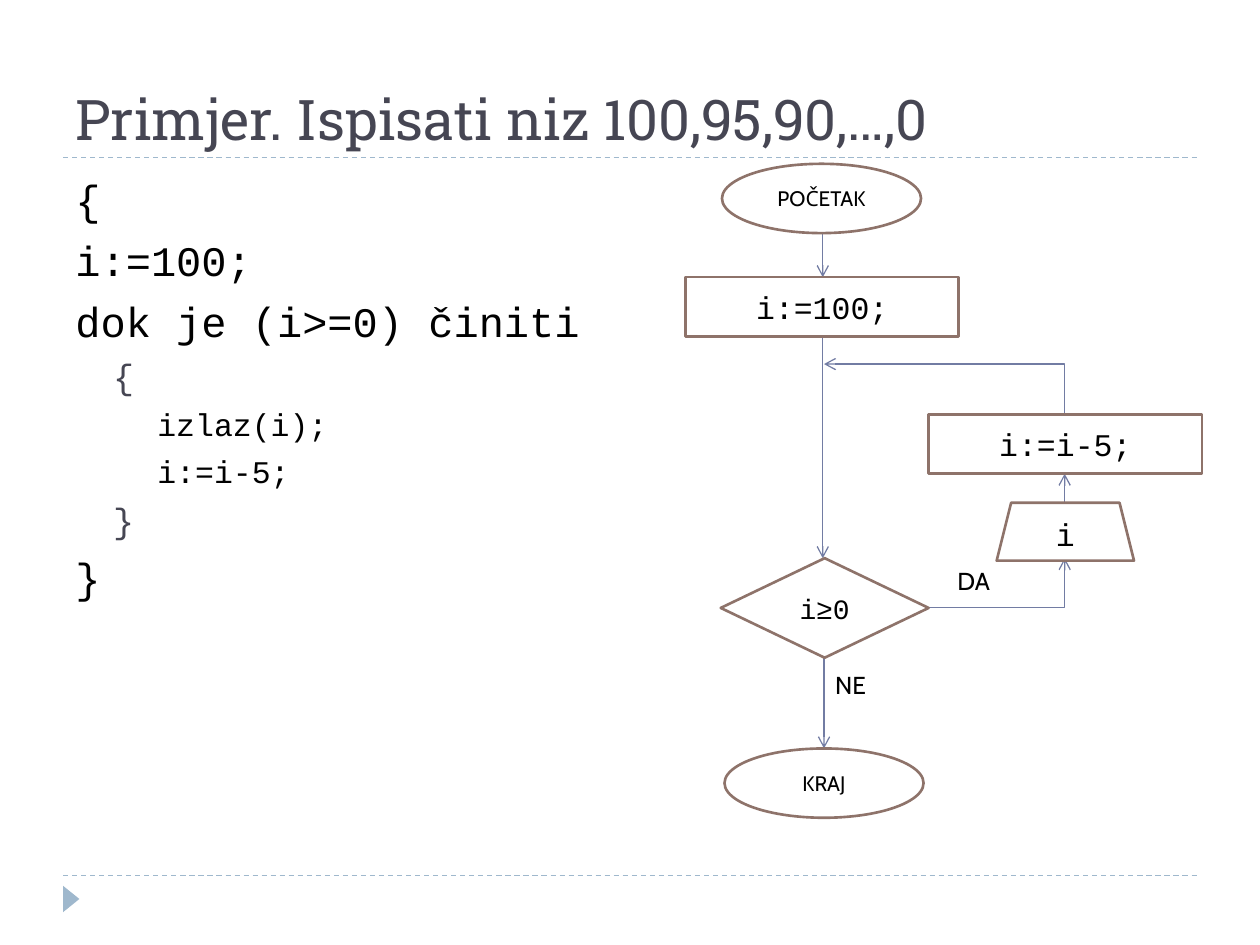
from lxml import etree
from pptx import Presentation
from pptx.dml.color import RGBColor
from pptx.enum.dml import MSO_LINE
from pptx.enum.shapes import MSO_CONNECTOR, MSO_SHAPE
from pptx.enum.text import MSO_ANCHOR, PP_ALIGN
from pptx.oxml.ns import qn
from pptx.util import Inches, Pt

BLACK = RGBColor(0x00, 0x00, 0x00)
WHITE = RGBColor(0xFF, 0xFF, 0xFF)
SLATE = RGBColor(0x46, 0x46, 0x53)
PALE_BLUE = RGBColor(0x9F, 0xB8, 0xCD)
ARROW_BLUE = RGBColor(0x72, 0x7C, 0xA3)
BROWN = RGBColor(0x8E, 0x73, 0x6A)
CODE, SANS, SERIF = "Courier New", "Cabin", "Roboto Slab"
STRAIGHT, ELBOW = MSO_CONNECTOR.STRAIGHT, MSO_CONNECTOR.ELBOW
ELLIPSE, RECT = MSO_SHAPE.OVAL, MSO_SHAPE.RECTANGLE
DIAMOND, TRAPEZOID = MSO_SHAPE.DIAMOND, MSO_SHAPE.TRAPEZOID
TRIANGLE = MSO_SHAPE.ISOSCELES_TRIANGLE
DASH = MSO_LINE.DASH
CENTER = PP_ALIGN.CENTER
MIDDLE, BOTTOM = MSO_ANCHOR.MIDDLE, MSO_ANCHOR.BOTTOM

prs = Presentation()
prs.slide_width, prs.slide_height = Inches(10), Inches(7.5)
s = prs.slides.add_slide(prs.slide_layouts[6])


def add_run(p, text, size, font, color=BLACK):
    r = p.add_run()
    r.text = text
    r.font.size, r.font.name = Pt(size), font
    r.font.color.rgb = color


def add_line(kind, x1, y1, x2, y2, color):
    line = s.shapes.add_connector(kind, Inches(x1), Inches(y1), Inches(x2), Inches(y2))
    line.line.color.rgb, line.line.width = color, Pt(0.75)
    etree.SubElement(line._element.spPr, qn("a:effectLst"))
    return line


for y in (6.95, 1.25):
    add_line(STRAIGHT, 0.5, y, 9.5, y, PALE_BLUE).line.dash_style = DASH

marker = s.shapes.add_shape(TRIANGLE, Inches(0.46), Inches(7.07), Inches(0.21), Inches(0.13))
marker.rotation = 90
marker.shadow.inherit = False
marker.fill.solid()
marker.fill.fore_color.rgb = PALE_BLUE
marker.line.fill.background()

title = s.shapes.add_textbox(Inches(0.5), Inches(0.17), Inches(9), Inches(1.08))
tf = title.text_frame
tf.word_wrap, tf.vertical_anchor = True, BOTTOM
add_run(tf.paragraphs[0], "Primjer. Ispisati niz 100,95,90,…,0", 32, SERIF, SLATE)

LEVELS = [(0, 6, 24, BLACK), (0.3, 5, 20, SLATE), (0.65, 5, 18, BLACK)]
code_lines = [
    ("{", 0), ("i:=100;", 0), ("dok je (i>=0) činiti", 0), ("{", 1),
    ("izlaz(i);", 2), ("i:=i-5;", 2), ("}", 1), ("}", 0),
]
body = s.shapes.add_textbox(Inches(0.5), Inches(1.33), Inches(4.42), Inches(3.68))
tf = body.text_frame
tf.word_wrap = True
for i, (text, level) in enumerate(code_lines):
    indent, before, size, color = LEVELS[level]
    p = tf.add_paragraph() if i else tf.paragraphs[0]
    p.level, p.space_before = level, Pt(before)
    p._p.get_or_add_pPr().set("marL", str(Inches(indent)))
    add_run(p, text, size, CODE, color)

arrows = [
    (STRAIGHT, 6.53, 2.62, 6.53, 4.43, None),
    (ELBOW, 7.37, 4.82, 8.45, 4.43, 100000),
    (ELBOW, 8.45, 3.29, 6.54, 2.89, 0),
    (STRAIGHT, 6.54, 5.22, 6.54, 5.94, None),
    (STRAIGHT, 6.53, 1.85, 6.53, 2.2, None),
    (STRAIGHT, 8.45, 3.99, 8.45, 3.76, None),
]
for kind, x1, y1, x2, y2, bend in arrows:
    arrow = add_line(kind, x1, y1, x2, y2, ARROW_BLUE)
    etree.SubElement(arrow.line._get_or_add_ln(), qn("a:tailEnd"), type="arrow")
    if bend is not None:
        guides = arrow._element.spPr.find(qn("a:prstGeom")).find(qn("a:avLst"))
        etree.SubElement(guides, qn("a:gd"), name="adj1", fmla=f"val {bend}")

nodes = [
    (ELLIPSE, 5.73, 1.3, 1.58, 0.55, "POČETAK", 12, SANS),
    (RECT, 5.44, 2.2, 2.17, 0.47, "i:=100;", 18, CODE),
    (RECT, 7.37, 3.29, 2.17, 0.47, "i:=i-5;", 18, CODE),
    (TRAPEZOID, 7.91, 3.99, 1.09, 0.46, "i", 18, CODE),
    (DIAMOND, 5.72, 4.43, 1.65, 0.79, "i≥0", 16, CODE),
    (ELLIPSE, 5.75, 5.94, 1.58, 0.55, "KRAJ", 12, SANS),
]
for kind, x, y, w, h, text, size, font in nodes:
    sp = s.shapes.add_shape(kind, Inches(x), Inches(y), Inches(w), Inches(h))
    sp.shadow.inherit = False
    sp.fill.solid()
    sp.fill.fore_color.rgb = WHITE
    sp.line.color.rgb, sp.line.width = BROWN, Pt(1.5)
    tf = sp.text_frame
    tf.word_wrap, tf.vertical_anchor = True, MIDDLE
    p = tf.paragraphs[0]
    p.alignment = CENTER
    add_run(p, text, size, font)

for x, y, text in [(7.5, 4.44, "DA"), (6.53, 5.27, "NE")]:
    label = s.shapes.add_textbox(Inches(x), Inches(y), Inches(0.78), Inches(0.34))
    label.text_frame.word_wrap = True
    add_run(label.text_frame.paragraphs[0], text, 14, SANS)

prs.save("out.pptx")
